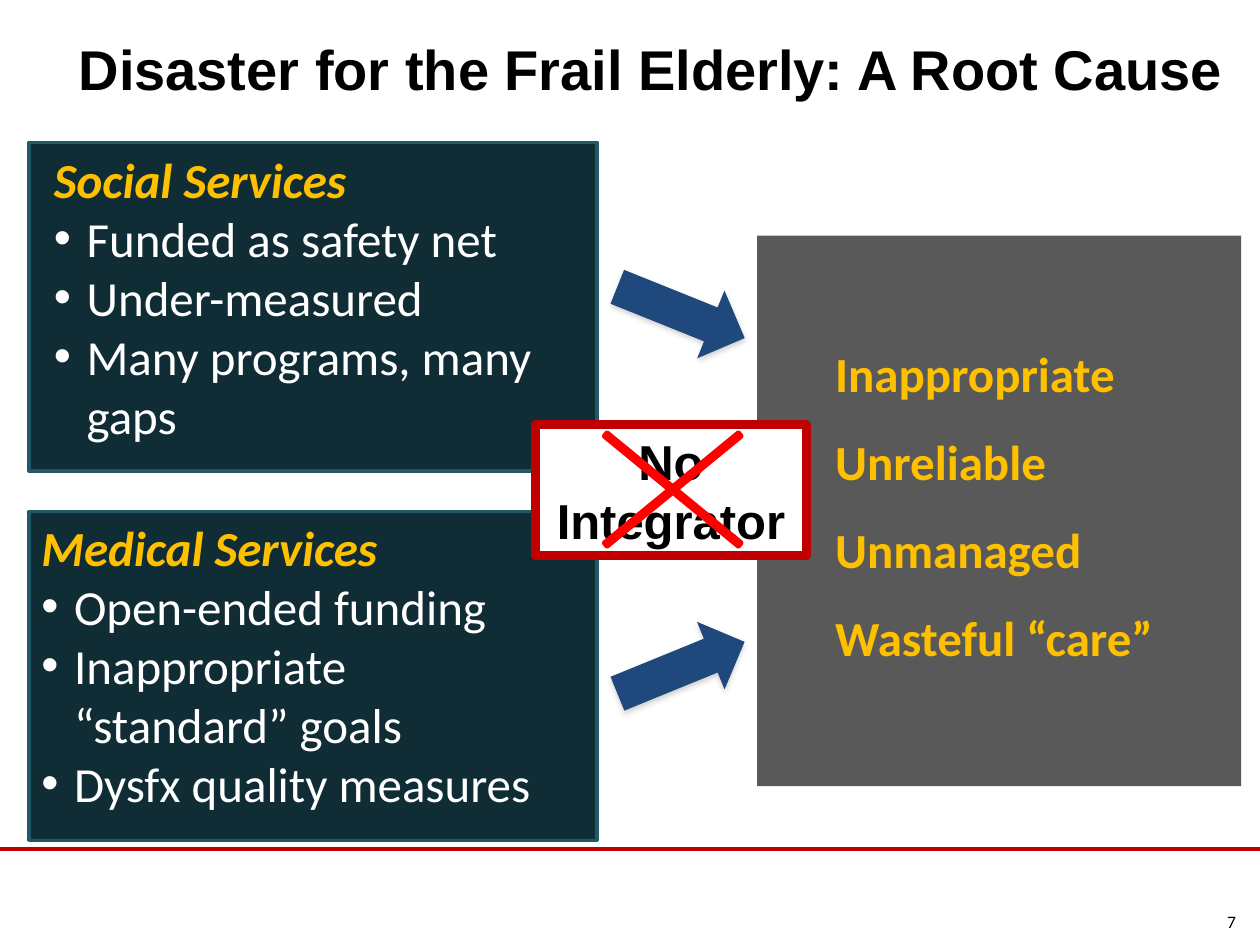
"""Build a slide on the root cause of poor care for the frail elderly."""
from lxml import etree
from pptx import Presentation
from pptx.dml.color import RGBColor
from pptx.enum.shapes import MSO_CONNECTOR, MSO_SHAPE
from pptx.enum.text import MSO_ANCHOR, MSO_AUTO_SIZE, PP_ALIGN
from pptx.oxml import parse_xml
from pptx.oxml.ns import nsdecls, qn
from pptx.util import Inches, Pt

RECTANGLE, ARROW, CROSS = MSO_SHAPE.RECTANGLE, MSO_SHAPE.RIGHT_ARROW, MSO_SHAPE.MATH_MULTIPLY
LEFT, CENTER, RIGHT = PP_ALIGN.LEFT, PP_ALIGN.CENTER, PP_ALIGN.RIGHT
TOP, MIDDLE, BOTTOM = MSO_ANCHOR.TOP, MSO_ANCHOR.MIDDLE, MSO_ANCHOR.BOTTOM

THEME = {
    "black": RGBColor.from_string("000000"),
    "white": RGBColor.from_string("FFFFFF"),
    "gold": RGBColor.from_string("FFC000"),
    "navy": RGBColor.from_string("1F497D"),
    "gray": RGBColor.from_string("595959"),
    "panel": RGBColor.from_string("102C34"),
    "edge": RGBColor.from_string("215968"),
    "crimson": RGBColor.from_string("C00000"),
    "red": RGBColor.from_string("FF0000"),
    "title": Pt(32),
    "text": Pt(28),
    "number": Pt(10),
}
HEADING = {"name": "Calibri", "size": THEME["text"], "bold": True, "italic": True, "color": "gold"}
ITEM = {**HEADING, "bold": False, "italic": False, "color": "white"}
OUTCOME = {**HEADING, "italic": False}
LABEL = {**OUTCOME, "name": "Arial", "color": "black"}
TITLE = {**LABEL, "size": THEME["title"]}
NUMBER = {**ITEM, "size": THEME["number"], "color": "black"}

SHADOW = (
    f'<a:effectLst {nsdecls("a")}><a:outerShdw blurRad="{Pt(3.1)}" dist="{Pt(1.8)}" '
    'dir="5400000" rotWithShape="0"><a:srgbClr val="808080"><a:alpha val="35000"/>'
    "</a:srgbClr></a:outerShdw></a:effectLst>"
)


def add_block(shapes, kind, place, fill, line=None, width=0):
    block = shapes.add_shape(kind, *map(Inches, place))
    block.shadow.inherit = False
    block.fill.solid()
    block.fill.fore_color.rgb = THEME[fill]
    if line:
        block.line.color.rgb = THEME[line]
        block.line.width = Pt(width)
    else:
        block.line.fill.background()
    return block


def write(box, lines, align=LEFT, anchor=TOP, spacing=None, margins=(0.1, 0.05)):
    frame = box.text_frame
    frame.auto_size = MSO_AUTO_SIZE.NONE
    frame.word_wrap = True
    frame.vertical_anchor = anchor
    frame.margin_left = frame.margin_right = Inches(margins[0])
    frame.margin_top = frame.margin_bottom = Inches(margins[1])
    for index, (text, style) in enumerate(lines):
        para = frame.add_paragraph() if index else frame.paragraphs[0]
        para.alignment = align
        if spacing:
            para.line_spacing = spacing
        if style is ITEM:
            properties = para._p.get_or_add_pPr()
            properties.set("marL", str(Inches(0.26)))
            properties.set("indent", str(-Inches(0.26)))
            etree.SubElement(properties, qn("a:buFont")).set("typeface", "Arial")
            etree.SubElement(properties, qn("a:buChar")).set("char", "•")
        span = para.add_run()
        span.text = text
        for name, value in style.items():
            if name == "color":
                span.font.color.rgb = THEME[value]
            else:
                setattr(span.font, name, value)


deck = Presentation()
deck.slide_width, deck.slide_height = Inches(10), Inches(7.5)
page = deck.slides.add_slide(deck.slide_layouts[5])

title = page.shapes.title
title.left, title.top, title.width, title.height = map(Inches, (0.62, 0.09, 9.1, 0.72))
write(title, [("Disaster for the Frail Elderly: A Root Cause", TITLE)], CENTER, BOTTOM, margins=(0, 0))

number = page.shapes.add_textbox(*map(Inches, (9.08, 7.18, 0.73, 0.27)))
write(number, [("7", NUMBER)], RIGHT, margins=(0, 0.05))

rule = page.shapes.add_connector(MSO_CONNECTOR.STRAIGHT, Inches(0), Inches(6.74), Inches(10), Inches(6.74))
rule.line.color.rgb = THEME["crimson"]
rule.line.width = Pt(2)
etree.SubElement(rule._element.spPr, qn("a:effectLst"))

add_block(page.shapes, RECTANGLE, (6.01, 1.87, 3.84, 4.37), "gray")
outcomes = page.shapes.add_textbox(*map(Inches, (6.53, 2.44, 3.19, 3.87)))
outcome_names = ["Inappropriate", "Unreliable", "Unmanaged", "Wasteful “care”"]
write(outcomes, [(name, OUTCOME) for name in outcome_names], spacing=1.5)

services = [
    (1.13, 0.33, 1.14, "Social Services",
     ["Funded as safety net", "Under-measured", "Many programs, many gaps"]),
    (4.06, 0.23, 4.06, "Medical Services",
     ["Open-ended funding", "Inappropriate “standard” goals", "Dysfx quality measures"]),
]
for panel_top, text_left, text_top, heading, items in services:
    group = page.shapes.add_group_shape()
    add_block(group.shapes, RECTANGLE, (0.23, panel_top, 4.51, 2.61), "panel", "edge", 2)
    box = group.shapes.add_textbox(*map(Inches, (text_left, text_top, 4.36, 2.46)))
    write(box, [(heading, HEADING)] + [(item, ITEM) for item in items])

for arrow_top, angle in [(2.19, 21.9), (5.01, 337.8)]:
    arrow = add_block(page.shapes, ARROW, (4.86, arrow_top, 1.09, 0.58), "navy")
    arrow.rotation = angle
    properties = arrow._element.spPr
    properties.replace(properties.find(qn("a:effectLst")), parse_xml(SHADOW))

integrator = page.shapes.add_group_shape()
label = add_block(integrator.shapes, RECTANGLE, (4.25, 3.37, 2.15, 1.04), "white", "crimson", 5)
write(label, [("No Integrator", LABEL)], CENTER, MIDDLE)
cross = add_block(integrator.shapes, CROSS, (4.31, 3.04, 2.06, 1.69), "red", "red", 2.25)
cross.adjustments[0] = 0.025

deck.save("out.pptx")
